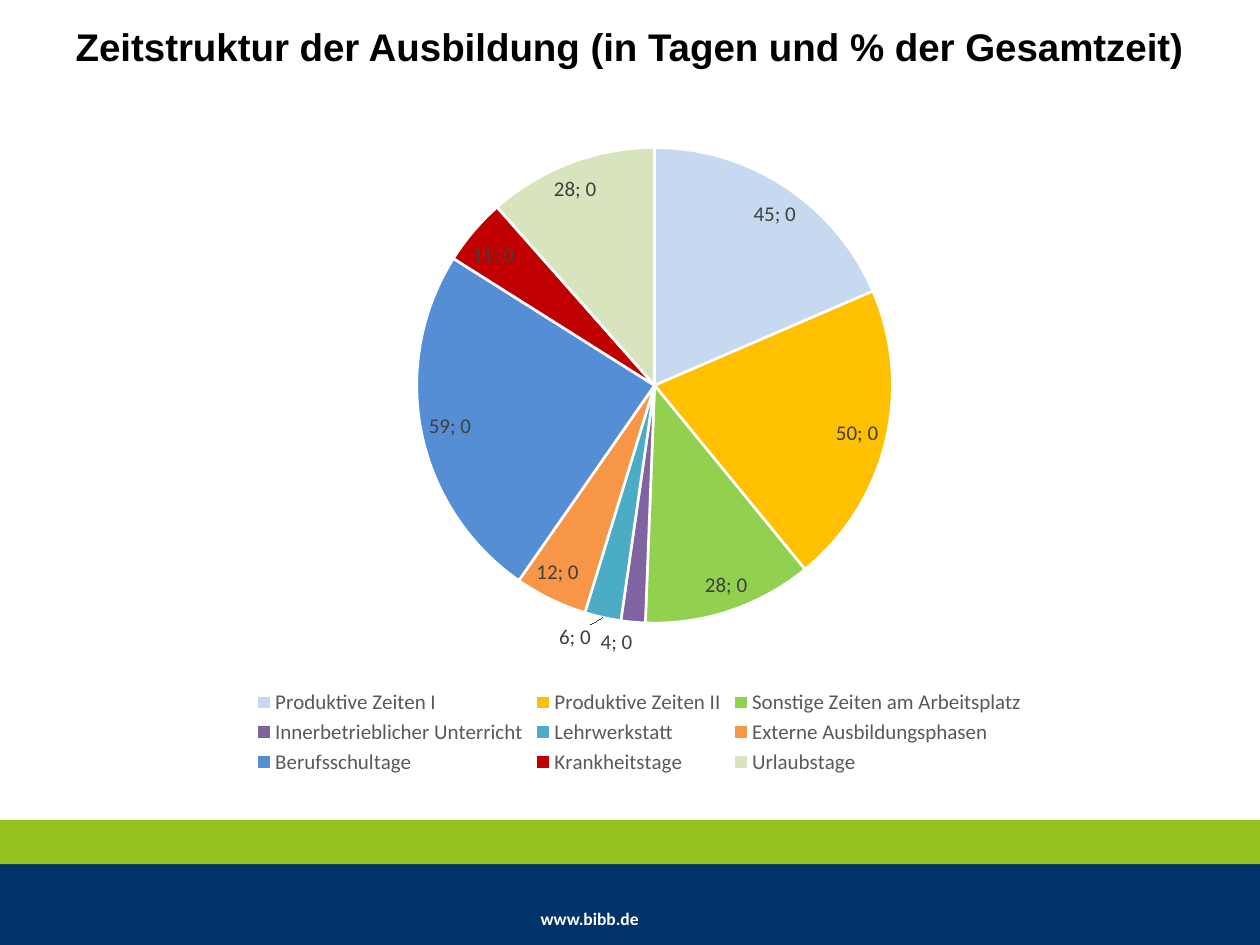
from dataclasses import dataclass

from lxml import etree
from pptx import Presentation
from pptx.chart.data import CategoryChartData
from pptx.dml.color import RGBColor
from pptx.enum.chart import XL_CHART_TYPE, XL_LABEL_POSITION, XL_LEGEND_POSITION
from pptx.enum.shapes import MSO_SHAPE
from pptx.enum.text import PP_ALIGN
from pptx.oxml.ns import qn
from pptx.util import Cm, Pt

PIE = XL_CHART_TYPE.PIE
BEST_FIT = XL_LABEL_POSITION.BEST_FIT
LEGEND_BOTTOM = XL_LEGEND_POSITION.BOTTOM
RECTANGLE = MSO_SHAPE.RECTANGLE
CENTER = PP_ALIGN.CENTER
LEFT = PP_ALIGN.LEFT

WIDTH, HEIGHT = 25.4, 19.05


@dataclass(frozen=True)
class Share:
    activity: str
    days: int
    color: str


@dataclass(frozen=True)
class Band:
    top: float
    height: float
    color: str


@dataclass(frozen=True)
class Line:
    text: str
    box: tuple[float, float, float, float]
    margins: tuple[float, float]
    size: int
    font: str
    color: str
    align: PP_ALIGN


SHARES = [
    Share("Produktive Zeiten I", 45, "C6D9F1"),
    Share("Produktive Zeiten II", 50, "FFC000"),
    Share("Sonstige Zeiten am Arbeitsplatz", 28, "92D050"),
    Share("Innerbetrieblicher Unterricht", 4, "8064A2"),
    Share("Lehrwerkstatt", 6, "4BACC6"),
    Share("Externe Ausbildungsphasen", 12, "F79646"),
    Share("Berufsschultage", 59, "558ED5"),
    Share("Krankheitstage", 11, "C00000"),
    Share("Urlaubstage", 28, "D7E4BD"),
]
BANDS = [Band(17.42, 1.63, "003369"), Band(16.53, 0.89, "95C11F")]
LINES = [
    Line("www.bibb.de", (10.9, 18.31, 2.59, 0.43), (0, 0), 10, "Calibri", "FFFFFF", LEFT),
    Line("Zeitstruktur der Ausbildung (in Tagen und % der Gesamtzeit)",
         (1.2, 0.33, 22.99, 1.19), (0.25, 0.13), 22, "Arial", "000000", CENTER),
]
PIE_AREA = {"x": 0.28, "y": 0.06, "w": 0.47, "h": 0.71}


def rgb(color: str) -> RGBColor:
    return RGBColor.from_string(color)


def style_font(font, size: int, name: str, color: str, bold: bool = False) -> None:
    font.size = Pt(size)
    font.name = name
    font.bold = bold
    font.color.rgb = rgb(color)


def add_band(slide, band: Band) -> None:
    stripe = slide.shapes.add_shape(
        RECTANGLE, Cm(0), Cm(band.top), Cm(WIDTH), Cm(band.height))
    stripe.shadow.inherit = False
    stripe.fill.solid()
    stripe.fill.fore_color.rgb = rgb(band.color)
    stripe.line.fill.background()


def add_line(slide, line: Line) -> None:
    frame = slide.shapes.add_textbox(*map(Cm, line.box)).text_frame
    frame.word_wrap = True
    side, edge = map(Cm, line.margins)
    frame.margin_left = frame.margin_right = side
    frame.margin_top = frame.margin_bottom = edge
    frame.text = line.text
    paragraph = frame.paragraphs[0]
    paragraph.alignment = line.align
    style_font(paragraph.runs[0].font, line.size, line.font, line.color, bold=True)


def place_pie(chart) -> None:
    plot_area = chart.plots[0]._element.getparent()
    for automatic in plot_area.findall(qn("c:layout")):
        plot_area.remove(automatic)
    layout = etree.Element(qn("c:layout"))
    plot_area.insert(0, layout)
    manual = etree.SubElement(layout, qn("c:manualLayout"))
    settings = {"layoutTarget": "inner", "xMode": "edge", "yMode": "edge", **PIE_AREA}
    for tag, value in settings.items():
        etree.SubElement(manual, qn(f"c:{tag}")).set("val", str(value))


def label_shares(series) -> None:
    labels = series.data_labels
    labels.show_value = True
    labels.show_percentage = True
    labels.number_format = "0"
    labels.number_format_is_linked = False
    labels.position = BEST_FIT
    style_font(labels.font, 12, "Calibri", "404040")
    separator = etree.Element(qn("c:separator"))
    separator.text = "; "
    labels._element.find(qn("c:showBubbleSize")).addnext(separator)
    leader_lines = labels._element.find(qn("c:showLeaderLines"))
    if leader_lines is None:
        leader_lines = etree.Element(qn("c:showLeaderLines"))
        separator.addnext(leader_lines)
    leader_lines.set("val", "1")


def add_time_chart(slide, shares: list[Share]) -> None:
    time_data = CategoryChartData(number_format="0")
    time_data.categories = [share.activity for share in shares]
    time_data.add_series("Tage", [share.days for share in shares])
    chart = slide.shapes.add_chart(
        PIE, Cm(2.69), Cm(2.13), Cm(20.4), Cm(13.59), time_data).chart
    style_font(chart.font, 10, "Calibri", "000000")
    chart.has_title = False
    chart.has_legend = True
    chart.legend.position = LEGEND_BOTTOM
    chart.legend.include_in_layout = False
    style_font(chart.legend.font, 12, "Calibri", "595959")
    pie = chart.plots[0]
    pie.vary_by_categories = True
    days = pie.series[0]
    for index, share in enumerate(shares):
        wedge = days.points[index].format
        wedge.fill.solid()
        wedge.fill.fore_color.rgb = rgb(share.color)
        wedge.line.color.rgb = rgb("FFFFFF")
        wedge.line.width = Pt(1.5)
    label_shares(days)
    place_pie(chart)


def main() -> None:
    deck = Presentation()
    deck.slide_width, deck.slide_height = Cm(WIDTH), Cm(HEIGHT)
    slide = deck.slides.add_slide(deck.slide_layouts[6])
    for band in BANDS:
        add_band(slide, band)
    for line in LINES:
        add_line(slide, line)
    add_time_chart(slide, SHARES)
    deck.save("out.pptx")


if __name__ == "__main__":
    main()
